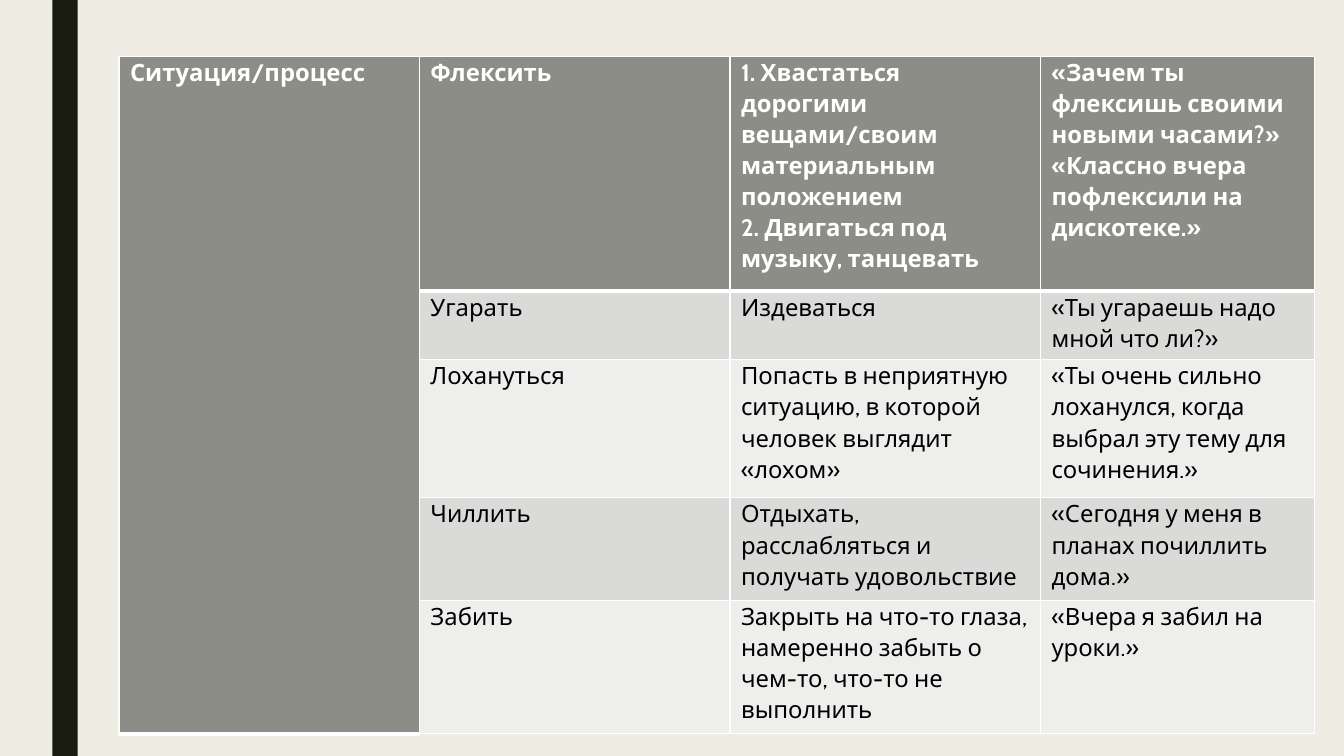
from lxml.etree import SubElement
from pptx import Presentation
from pptx.dml.color import RGBColor
from pptx.enum.shapes import MSO_SHAPE
from pptx.oxml.ns import qn
from pptx.util import Inches, Pt

BACKGROUND = RGBColor(0xEF, 0xED, 0xE3)
STRIPE = RGBColor(0x19, 0x1B, 0x0E)
HEADER = RGBColor(0x8C, 0x8D, 0x86)
DARK_BAND = RGBColor(0xDA, 0xDB, 0xD9)
LIGHT_BAND = RGBColor(0xEE, 0xEE, 0xED)
WHITE = RGBColor(0xFF, 0xFF, 0xFF)
BLACK = RGBColor(0x00, 0x00, 0x00)

COLUMN_WIDTHS = [2.98, 3.08, 3.08, 2.72]
ROW_HEIGHTS = [2.33, 0.68, 1.37, 1.02, 1.32]
CATEGORY = "Ситуация/процесс"
SLANG = [
    ("Флексить",
     "1. Хвастаться дорогими вещами/своим материальным положением\n"
     "2. Двигаться под музыку, танцевать",
     "«Зачем ты флексишь своими новыми часами?»\n"
     "«Классно вчера пофлексили на дискотеке.»"),
    ("Угарать", "Издеваться", "«Ты угараешь надо мной что ли?»"),
    ("Лохануться",
     "Попасть в неприятную ситуацию, в которой человек выглядит «лохом»",
     "«Ты очень сильно лоханулся, когда выбрал эту тему для сочинения.»"),
    ("Чиллить",
     "Отдыхать, расслабляться и получать удовольствие",
     "«Сегодня у меня в планах почиллить дома.»"),
    ("Забить",
     "Закрыть на что-то глаза, намеренно забыть о чем-то, что-то не выполнить",
     "«Вчера я забил на уроки.»"),
]


def add_border(cell, side, points):
    line = SubElement(cell._tc.get_or_add_tcPr(), qn(f"a:ln{side}"), w=str(Pt(points)))
    fill = SubElement(line, qn("a:solidFill"))
    SubElement(fill, qn("a:srgbClr"), val=str(WHITE))


def write_cell(cell, text, color, bold):
    cell.text_frame.text = text
    for paragraph in cell.text_frame.paragraphs:
        paragraph.line_spacing = 1.07
        font = paragraph.runs[0].font
        font.name = "Cabin"
        font.size = Pt(17)
        font.bold = bold
        font.color.rgb = color


presentation = Presentation()
presentation.slide_width = Inches(13.33)
presentation.slide_height = Inches(7.5)
slide = presentation.slides.add_slide(presentation.slide_layouts[6])
slide.background.fill.solid()
slide.background.fill.fore_color.rgb = BACKGROUND

stripe = slide.shapes.add_shape(
    MSO_SHAPE.RECTANGLE, Inches(0.52), 0, Inches(0.25), Inches(7.5))
stripe.shadow.inherit = False
stripe.fill.solid()
stripe.fill.fore_color.rgb = STRIPE
stripe.line.fill.background()

table = slide.shapes.add_table(
    len(ROW_HEIGHTS), len(COLUMN_WIDTHS),
    Inches(1.18), Inches(0.56), Inches(11.86), Inches(6.72)).table
for column, width in zip(table.columns, COLUMN_WIDTHS):
    column.width = Inches(width)
for row, height in zip(table.rows, ROW_HEIGHTS):
    row.height = Inches(height)
table.cell(0, 0).merge(table.cell(len(SLANG) - 1, 0))

for row_index, entry in enumerate(SLANG):
    is_header = row_index == 0
    band = DARK_BAND if row_index % 2 else LIGHT_BAND
    for column_index, text in enumerate((CATEGORY, *entry)):
        cell = table.cell(row_index, column_index)
        in_category = column_index == 0
        cell.margin_left = cell.margin_right = Inches(0.11)
        cell.margin_top = cell.margin_bottom = 0
        add_border(cell, "L", 1)
        add_border(cell, "R", 1)
        add_border(cell, "T", 3 if row_index == 1 and not in_category else 1)
        add_border(cell, "B", 3 if is_header or in_category else 1)
        cell.fill.solid()
        cell.fill.fore_color.rgb = HEADER if is_header or in_category else band
        if not cell.is_spanned:
            write_cell(cell, text, WHITE if is_header else BLACK, is_header)

presentation.save("out.pptx")
